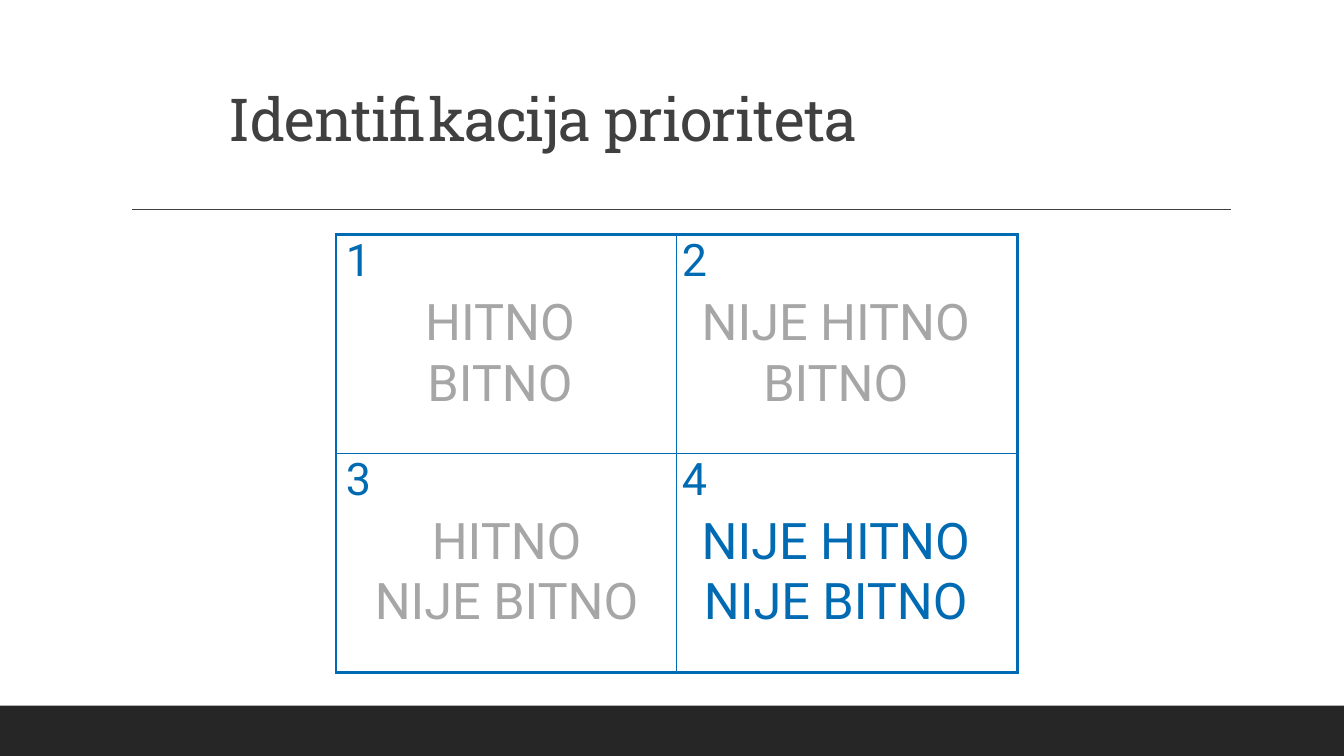
"""Builds the priority matrix slide: urgent against important, in four quadrants."""
from lxml import etree
from pptx import Presentation, util as u
from pptx.dml.color import RGBColor
from pptx.enum import shapes, text
from pptx.oxml.ns import qn

THEME = {
    "blue": "006AB3", "gray": "A6A6A6", "ink": "404040", "footer": "262626",
    "head_font": "Roboto Slab", "body_font": "Roboto",
    "title_size": 42.3, "label_size": 36, "number_size": 32,
    "outer_line": 2.25, "thin_line": 1,
}
WIDTH, HEIGHT = 13.33, 7.5
MATRIX_LEFT, MATRIX_TOP = WIDTH / 4, 2.33
COLUMN, ROW = 3.38, 2.17


def add_text(left, top, width, height, lines, size, color, font, align):
    """Place a text box with one paragraph per line and return its frame."""
    frame = slide.shapes.add_textbox(*map(u.Inches, (left, top, width, height))).text_frame
    frame.word_wrap = True
    for index, line in enumerate(lines):
        paragraph = frame.paragraphs[0] if index == 0 else frame.add_paragraph()
        paragraph.alignment = align
        run = paragraph.add_run()
        run.text = line
        run.font.name, run.font.size = font, u.Pt(size)
        run.font.color.rgb = RGBColor.from_string(color)
    return frame


def add_border(cell, sides):
    """Draw the cell's borders from (tag, points) pairs in schema order."""
    properties = cell._tc.get_or_add_tcPr()
    for index, (tag, points) in enumerate(sides):
        edge = etree.Element(qn(f"a:{tag}"), w=str(u.Pt(points)))
        paint = etree.SubElement(edge, qn("a:solidFill"))
        etree.SubElement(paint, qn("a:srgbClr"), val=THEME["blue"])
        properties.insert(index, edge)


deck = Presentation()
deck.slide_width, deck.slide_height = u.Inches(WIDTH), u.Inches(HEIGHT)
slide = deck.slides.add_slide(deck.slide_layouts[6])

footer = slide.shapes.add_shape(
    shapes.MSO_SHAPE.RECTANGLE, 0, u.Inches(HEIGHT - 0.5), u.Inches(WIDTH), u.Inches(0.5))
footer.shadow.inherit = False
footer.fill.solid()
footer.fill.fore_color.rgb = RGBColor.from_string(THEME["footer"])
footer.line.fill.background()

divider = slide.shapes.add_connector(
    shapes.MSO_CONNECTOR.STRAIGHT, *map(u.Inches, (1.31, 2.08, 12.21, 2.08)))
divider.line.color.rgb = RGBColor.from_string(THEME["ink"])
divider.line.width = u.Pt(THEME["thin_line"])
etree.SubElement(divider._element.spPr, qn("a:effectLst"))

heading = add_text(2.17, 1.08, 9, 0.5, ["Identifikacija prioriteta"], THEME["title_size"],
                   THEME["ink"], THEME["head_font"], text.PP_ALIGN.LEFT)
heading.vertical_anchor = text.MSO_ANCHOR.BOTTOM
heading.paragraphs[0].line_spacing = 0.9
heading.paragraphs[0].runs[0].font._element.set("spc", "-50")

matrix = slide.shapes.add_table(
    2, 2, *map(u.Inches, (MATRIX_LEFT, MATRIX_TOP, 2 * COLUMN, 2 * ROW))).table
matrix.first_row = matrix.horz_banding = False

quadrants = [
    (["HITNO", "BITNO"], 4.08, 1.76, "gray"),
    (["NIJE HITNO", "BITNO"], 6.8, 2.98, "gray"),
    (["HITNO", "NIJE BITNO"], 3.55, 2.95, "gray"),
    (["NIJE HITNO", "NIJE BITNO"], 6.8, 2.98, "blue"),
]
outer, thin = THEME["outer_line"], THEME["thin_line"]
for index, (label, label_left, label_width, tone) in enumerate(quadrants):
    row, column = divmod(index, 2)
    cell = matrix.cell(row, column)
    cell.fill.background()
    add_border(cell, [("lnL", thin if column else outer), ("lnR", outer if column else thin),
                      ("lnT", thin if row else outer), ("lnB", outer if row else thin)])
    add_text(label_left, MATRIX_TOP + 0.5 + row * ROW, label_width, 1.3, label,
             THEME["label_size"], THEME[tone], THEME["body_font"], text.PP_ALIGN.CENTER)
    add_text(WIDTH / 4 * (1 + column), MATRIX_TOP - 0.08 + row * ROW, 0.45, 0.63,
             [str(index + 1)], THEME["number_size"], THEME["blue"], THEME["body_font"],
             text.PP_ALIGN.LEFT)

deck.save("out.pptx")
